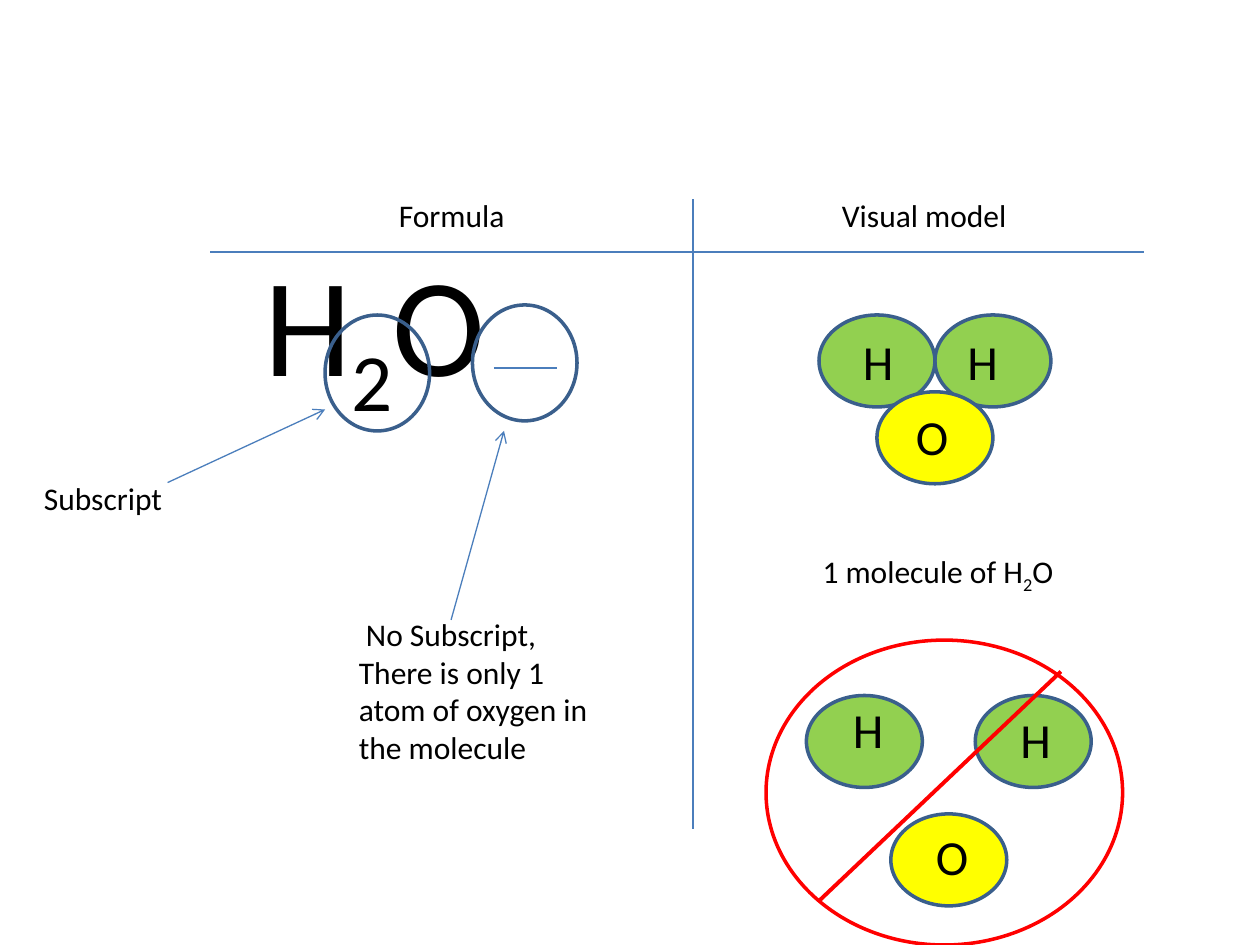
from dataclasses import dataclass

from lxml import etree
from pptx import Presentation
from pptx import util as u
from pptx.dml.color import RGBColor
from pptx.enum import shapes, text
from pptx.oxml.ns import qn


@dataclass(frozen=True)
class Theme:
    font: str = "Calibri"
    ink: str = "000000"
    rule: str = "4B7EBC"
    outline: str = "3A5F8C"
    hydrogen: str = "92D050"
    oxygen: str = "FFFF00"
    wrong: str = "FF0000"
    body: int = 18
    symbol: int = 28
    formula: int = 80
    thin: float = 0.75
    edge: float = 2
    strike: float = 2.25


@dataclass(frozen=True)
class Label:
    words: str
    x: float
    y: float
    w: float
    h: float = 0.4
    size: int = Theme.body
    centred: bool = False
    wrap: bool = True


@dataclass(frozen=True)
class Line:
    x1: float
    y1: float
    x2: float
    y2: float
    arrow: bool = False
    color: str = Theme.rule
    width: float = Theme.thin


@dataclass(frozen=True)
class Oval:
    x: float
    y: float
    w: float
    h: float
    fill: str | None = None
    line: str = Theme.outline


@dataclass(frozen=True)
class Atom:
    symbol: str
    x: float
    y: float
    label_x: float
    label_y: float


T = Theme()
ATOM_W, ATOM_H = 0.92, 0.73
RING_W, RING_H = 0.83, 0.92
ATOM_FILL = {"H": T.hydrogen, "O": T.oxygen}

LABELS = [
    Label("H_2_O", 2, 1.83, 4.08, 1.75, T.formula),
    Label(" No Subscript,\nThere is only 1\natom of oxygen in\nthe molecule",
          2.75, 4.83, 2.75, 1.31),
    Label("Subscript", 0.25, 3.75, 2.75),
    Label("Visual model", 5.75, 1.51, 3.17, centred=True),
    Label("Formula", 2, 1.51, 3.17, centred=True),
    Label("1 molecule of H_2_O", 6.43, 4.33, 2.07, wrap=False),
]
RINGS = [Oval(2.58, 2.5, RING_W, RING_H), Oval(3.75, 2.42, RING_W, RING_H)]
LINES = [
    Line(3.92, 2.92, 4.42, 2.92),
    Line(1.33, 3.83, 2.58, 3.25, arrow=True),
    Line(3.58, 4.92, 4, 3.42, arrow=True),
    Line(1.67, 2, 9.08, 2),
    Line(5.5, 1.58, 5.5, 6.58),
]
SEPARATE_ATOMS = [
    Atom("H", 7.74, 5.52, 8, 5.58),
    Atom("H", 6.4, 5.52, 6.67, 5.5),
    Atom("O", 7.07, 6.46, 7.33, 6.51),
]
STRIKE = Line(6.5, 7.15, 8.42, 5.33, color=T.wrong, width=T.strike)
BAN_RING = Oval(6.08, 5.08, 2.83, 2.42, line=T.wrong)
MOLECULE = [
    Atom("H", 7.42, 2.5, 7.58, 2.58),
    Atom("H", 6.5, 2.5, 6.75, 2.58),
    Atom("O", 6.96, 3.11, 7.17, 3.18),
]


def add_label(s, label: Label) -> None:
    """Text between a pair of underscores is set as a subscript."""
    box = map(u.Inches, (label.x, label.y, label.w, label.h))
    tf = s.shapes.add_textbox(*box).text_frame
    tf.word_wrap = label.wrap
    tf.auto_size = text.MSO_AUTO_SIZE.SHAPE_TO_FIT_TEXT
    style = {"name": T.font, "size": u.Pt(label.size)}
    for i, words in enumerate(label.words.split("\n")):
        p = tf.add_paragraph() if i else tf.paragraphs[0]
        p.alignment = text.PP_ALIGN.CENTER if label.centred else text.PP_ALIGN.LEFT
        for j, part in enumerate(words.split("_")):
            r = p.add_run()
            r.text = part
            for key, value in style.items():
                setattr(r.font, key, value)
            r.font.color.rgb = RGBColor.from_string(T.ink)
            if j % 2:
                r.font._element.set("baseline", "-25000")


def add_line(s, line: Line) -> None:
    ends = map(u.Inches, (line.x1, line.y1, line.x2, line.y2))
    cx = s.shapes.add_connector(shapes.MSO_CONNECTOR.STRAIGHT, *ends)
    cx.line.color.rgb = RGBColor.from_string(line.color)
    cx.line.width = u.Pt(line.width)
    if line.arrow:
        etree.SubElement(cx.line._get_or_add_ln(), qn("a:tailEnd"), type="arrow")
    etree.SubElement(cx._element.spPr, qn("a:effectLst"))


def add_oval(s, oval: Oval) -> None:
    box = map(u.Inches, (oval.x, oval.y, oval.w, oval.h))
    sp = s.shapes.add_shape(shapes.MSO_SHAPE.OVAL, *box)
    sp.shadow.inherit = False
    if oval.fill:
        sp.fill.solid()
        sp.fill.fore_color.rgb = RGBColor.from_string(oval.fill)
    else:
        sp.fill.background()
    sp.line.color.rgb = RGBColor.from_string(oval.line)
    sp.line.width = u.Pt(T.edge)


def add_atoms(s, atoms: list[Atom], overlay: tuple[Line, Oval] | None = None) -> None:
    """Draw the atoms, then an optional strike and ring, then the symbols on top."""
    for a in atoms:
        add_oval(s, Oval(a.x, a.y, ATOM_W, ATOM_H, ATOM_FILL[a.symbol]))
    if overlay:
        strike, ring = overlay
        add_line(s, strike)
        add_oval(s, ring)
    for a in atoms:
        add_label(s, Label(a.symbol, a.label_x, a.label_y, 0.5, 0.57, T.symbol))


def main() -> None:
    prs = Presentation()
    prs.slide_width, prs.slide_height = u.Inches(10), u.Inches(7.5)
    s = prs.slides.add_slide(prs.slide_layouts.get_by_name("Blank"))
    for label in LABELS:
        add_label(s, label)
    for ring in RINGS:
        add_oval(s, ring)
    for line in LINES:
        add_line(s, line)
    add_atoms(s, SEPARATE_ATOMS, (STRIKE, BAN_RING))
    add_atoms(s, MOLECULE)
    prs.save("out.pptx")


if __name__ == "__main__":
    main()
